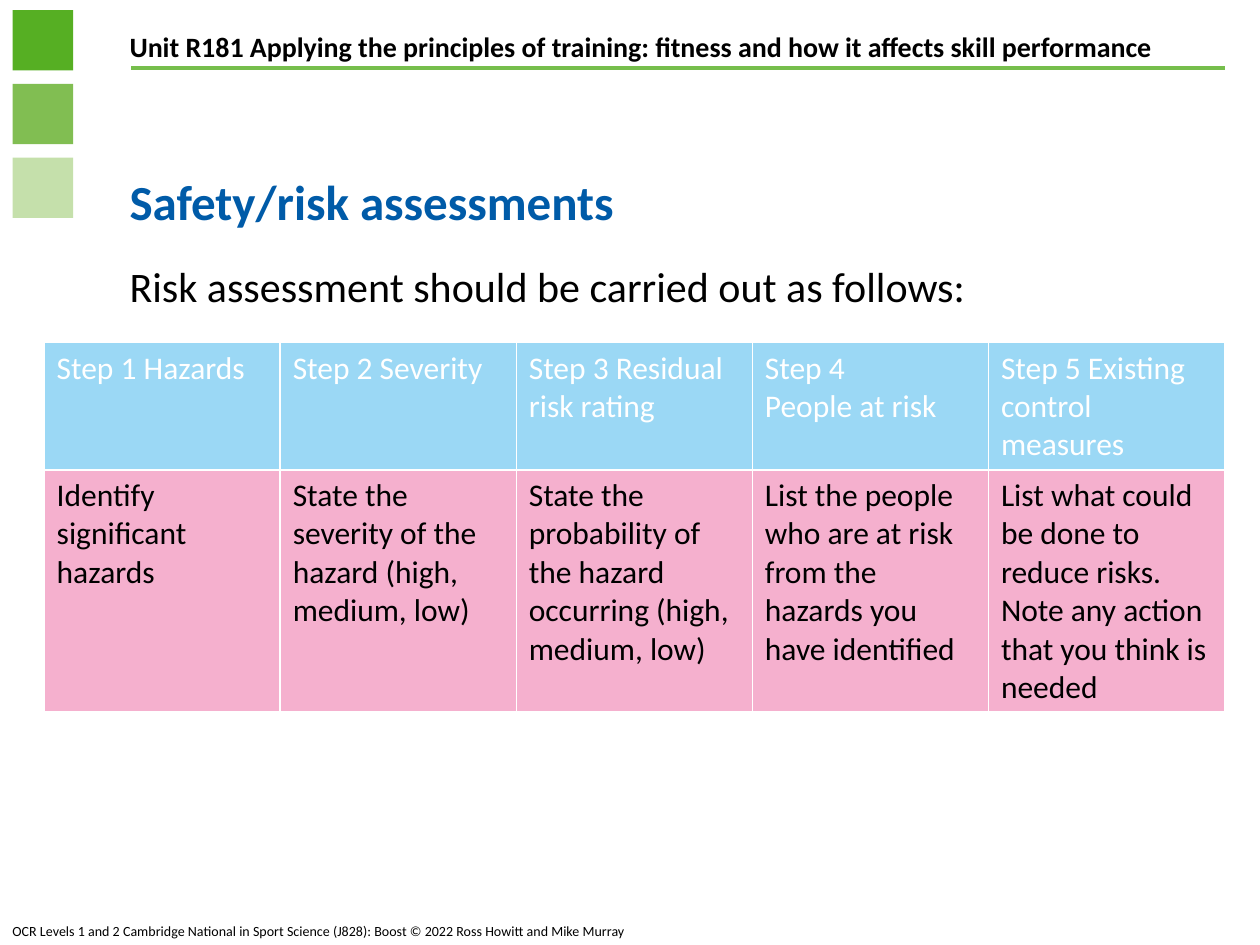
import dataclasses

import lxml.etree
import pptx
import pptx.dml.color
import pptx.enum.shapes
import pptx.enum.text
import pptx.oxml.ns
import pptx.util

Inches = pptx.util.Inches
Pt = pptx.util.Pt
Anchor = pptx.enum.text.MSO_ANCHOR


@dataclasses.dataclass(frozen=True)
class Theme:
    font: str = "Calibri"
    black: str = "000000"
    white: str = "FFFFFF"
    title: str = "005BA8"
    rule: str = "76BE4C"
    squares: tuple = ("56AF23", "81BE52", "C5E0AB")
    header_fill: str = "9BD8F5"
    body_fill: str = "F5B0CE"
    footer_size: float = 8
    unit_size: float = 16
    title_size: float = 28
    body_size: float = 24
    table_size: float = 18
    rule_width: float = 2.25
    border_width: float = 1


THEME = Theme()

STEPS = [
    ("Step 1 Hazards", "Identify significant hazards"),
    ("Step 2 Severity", "State the severity of the hazard (high, medium, low)"),
    ("Step 3 Residual risk rating",
     "State the probability of the hazard occurring (high, medium, low)"),
    ("Step 4\nPeople at risk",
     "List the people who are at risk from the hazards you have identified"),
    ("Step 5 Existing control measures",
     "List what could be done to reduce risks. Note any action that you think is needed"),
]


def rgb(value):
    return pptx.dml.color.RGBColor.from_string(value)


def style_text(text_frame, size, color, bold=False):
    for paragraph in text_frame.paragraphs:
        for run in paragraph.runs:
            run.font.name = THEME.font
            run.font.size = Pt(size)
            run.font.bold = bold
            run.font.color.rgb = rgb(color)


def add_text(slide, text, box, size, color=THEME.black, bold=False, anchor=Anchor.TOP):
    shape = slide.shapes.add_textbox(*map(Inches, box))
    text_frame = shape.text_frame
    text_frame.word_wrap = True
    text_frame.vertical_anchor = anchor
    text_frame.text = text
    style_text(text_frame, size, color, bold)


def add_rule(slide, left, right, top):
    connector = slide.shapes.add_connector(
        pptx.enum.shapes.MSO_CONNECTOR.STRAIGHT,
        Inches(left), Inches(top), Inches(right), Inches(top))
    connector.line.color.rgb = rgb(THEME.rule)
    connector.line.width = Pt(THEME.rule_width)
    properties = connector.element.spPr
    lxml.etree.SubElement(properties, pptx.oxml.ns.qn("a:effectLst"))


def add_squares(slide, left, top, size, pitch):
    for index, color in enumerate(THEME.squares):
        shape = slide.shapes.add_shape(
            pptx.enum.shapes.MSO_SHAPE.RECTANGLE,
            Inches(left), Inches(top + index * pitch), Inches(size), Inches(size))
        shape.shadow.inherit = False
        shape.fill.solid()
        shape.fill.fore_color.rgb = rgb(color)
        shape.line.fill.background()


def set_borders(cell):
    properties = cell._tc.get_or_add_tcPr()
    qn = pptx.oxml.ns.qn
    for index, side in enumerate(("a:lnL", "a:lnR", "a:lnT", "a:lnB")):
        line = lxml.etree.Element(qn(side), w=str(Pt(THEME.border_width)))
        fill = lxml.etree.SubElement(line, qn("a:solidFill"))
        lxml.etree.SubElement(fill, qn("a:srgbClr"), val=THEME.white)
        properties.insert(index, line)


def fill_cell(cell, text, fill, color):
    cell.text = text
    style_text(cell.text_frame, THEME.table_size, color)
    cell.fill.solid()
    cell.fill.fore_color.rgb = rgb(fill)
    set_borders(cell)


def add_steps_table(slide, left, top, width, row_heights):
    table = slide.shapes.add_table(
        len(row_heights), len(STEPS), Inches(left), Inches(top),
        Inches(width), Inches(sum(row_heights))).table
    for row, height in zip(table.rows, row_heights):
        row.height = Inches(height)
    for column, (heading, action) in enumerate(STEPS):
        fill_cell(table.cell(0, column), heading, THEME.header_fill, THEME.white)
        fill_cell(table.cell(1, column), action, THEME.body_fill, THEME.black)


def main():
    presentation = pptx.Presentation()
    presentation.slide_width = Inches(10)
    presentation.slide_height = Inches(7.5)
    slide = presentation.slides.add_slide(presentation.slide_layouts[6])

    add_text(slide, "OCR Levels 1 and 2 Cambridge National in Sport Science (J828): "
             "Boost © 2022 Ross Howitt and Mike Murray",
             (0, 7.27, 6.58, 0.23), THEME.footer_size)
    add_text(slide, "Unit R181 Applying the principles of training: "
             "fitness and how it affects skill performance",
             (0.93, 0.14, 8.88, 0.46), THEME.unit_size, bold=True, anchor=Anchor.MIDDLE)
    add_rule(slide, 1.04, 9.72, 0.54)
    add_squares(slide, left=0.1, top=0.08, size=0.48, pitch=0.585)
    add_text(slide, "Safety/risk assessments", (0.93, 0.51, 8.8, 1.37),
             THEME.title_size, THEME.title, bold=True, anchor=Anchor.BOTTOM)
    add_text(slide, "Risk assessment should be carried out as follows:",
             (0.93, 2.02, 8.8, 4.97), THEME.body_size)
    add_steps_table(slide, left=0.35, top=2.72, width=9.37, row_heights=(1.01, 1.92))

    presentation.save("out.pptx")


if __name__ == "__main__":
    main()
